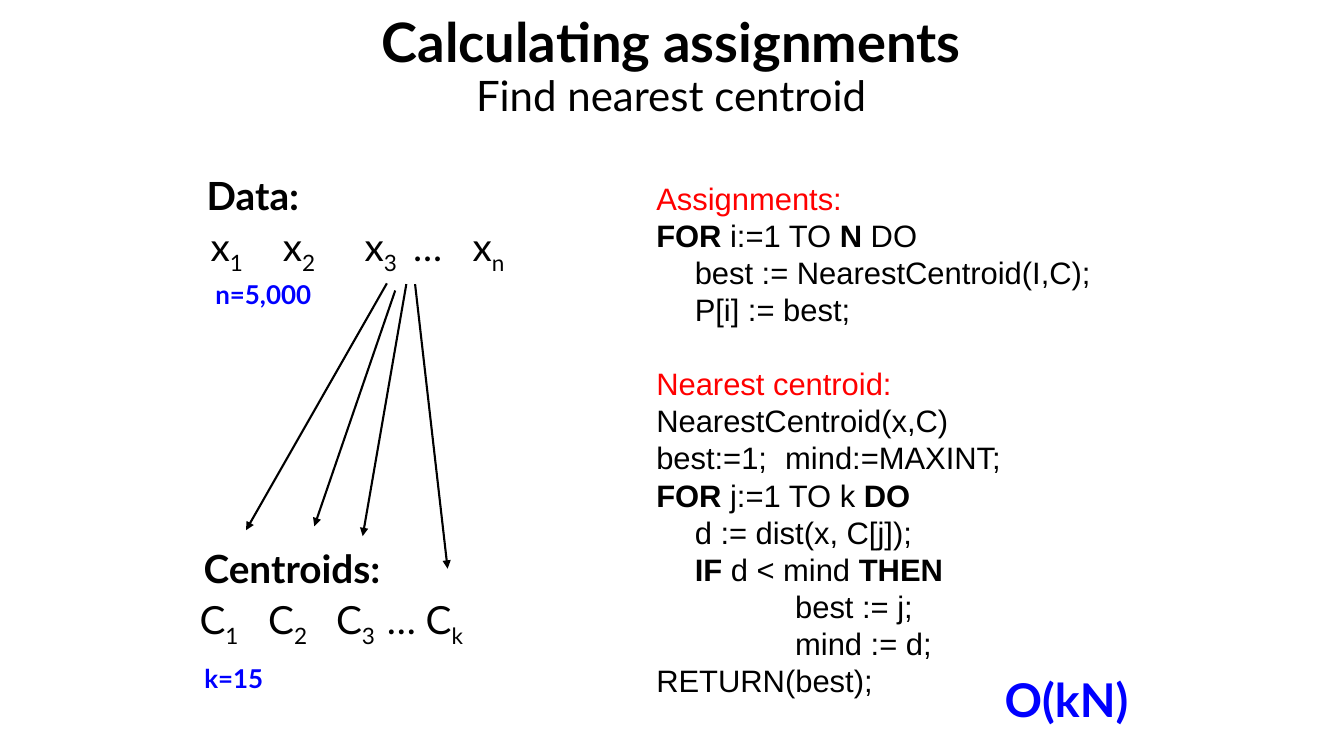
from lxml.etree import SubElement
from pptx import Presentation
from pptx.dml.color import RGBColor
from pptx.enum.shapes import MSO_CONNECTOR as CONN, MSO_SHAPE as SHAPE
from pptx.enum.text import MSO_ANCHOR as ANCHOR, MSO_AUTO_SIZE as AUTO, PP_ALIGN as ALIGN
from pptx.oxml.ns import qn
from pptx.util import Cm, Pt

BLACK, BLUE, RED, WHITE = "000000", "0000FF", "FF0000", "FFFFFF"
HEADING = {"name": "Lato", "size": Pt(27.7), "bold": True}
SYMBOL = {"name": "Lato", "size": Pt(27.7), "bold": False}
COUNT = {"name": "Lato", "size": Pt(18.5), "bold": True}
COST = {"name": "Lato", "size": Pt(33.2), "bold": True}
CODE = {"name": "Arial", "size": Pt(22.1)}
CODE_LINE = Pt(26.5)
CODE_INDENTS = (0, 0.97, 3.5)

ASSIGNMENTS = [
    (0, "*FOR* i:=1 TO *N* DO"),
    (1, "best := NearestCentroid(I,C);"),
    (1, "P[i] := best;"),
]
NEAREST = [
    (0, "NearestCentroid(x,C)"),
    (0, "best:=1;\tmind:=MAXINT;"),
    (0, "*FOR* j:=1 TO k *DO*"),
    (1, "d := dist(x, C[j]);"),
    (1, "*IF* d < mind *THEN*"),
    (2, "best := j;"),
    (2, "mind := d;"),
    (0, "RETURN(best);"),
]
ARROWS = [
    (3.55, 0, 0, 6.22),
    (3.76, 0.18, 1.72, 6.12),
    (4.04, 0.02, 2.94, 6.37),
    (4.26, 0.02, 5.08, 7.19),
]


def rgb(value):
    return RGBColor.from_string(value)


def add_run(p, text, fmt, color=BLACK):
    r = p.add_run()
    r.text = text
    for key, value in fmt.items():
        setattr(r.font, key, value)
    r.font.color.rgb = rgb(color)
    return r


def set_tabs(p, stops):
    tabs = SubElement(p._p.get_or_add_pPr(), qn("a:tabLst"))
    for stop in stops:
        SubElement(tabs, qn("a:tab"), pos=str(Cm(stop)), algn="l")


def set_frame(tf, anchor=ANCHOR.TOP):
    frame = {"margin_left": 0, "margin_top": 0, "margin_right": 0, "margin_bottom": 0,
             "word_wrap": True, "auto_size": AUTO.NONE, "vertical_anchor": anchor}
    for key, value in frame.items():
        setattr(tf, key, value)


def add_label(s, left, top, width, height, anchor=ANCHOR.TOP):
    tf = s.shapes.add_textbox(Cm(left), Cm(top), Cm(width), Cm(height)).text_frame
    set_frame(tf, anchor)
    return tf.paragraphs[0]


def add_title(s, left, top, width, height):
    sp = s.shapes.title
    sp.left, sp.top, sp.width, sp.height = Cm(left), Cm(top), Cm(width), Cm(height)
    tf = sp.text_frame
    set_frame(tf, ANCHOR.MIDDLE)
    lines = [("Calculating assignments", 38.8, True), ("Find nearest centroid", 30, False)]
    for i, (text, size, bold) in enumerate(lines):
        p = tf.add_paragraph() if i else tf.paragraphs[0]
        p.alignment, p.line_spacing = ALIGN.CENTER, 0.93
        add_run(p, text, {"name": "Lato", "size": Pt(size), "bold": bold})


def add_point_set(s, left, top, heading, letter, last, stops, shift, count, count_top):
    add_run(add_label(s, left, top, 5.1, 1.2), heading, HEADING)

    p = add_label(s, left + shift, top + 1.29, 9.12, 1.2)
    set_tabs(p, stops)
    for i, index in enumerate(("1", "2", "3", "…", last)):
        tab = "\t" if i else ""
        if index == "…":
            add_run(p, tab + index, SYMBOL)
        else:
            add_run(p, tab + letter, SYMBOL)
            add_run(p, index, SYMBOL).font._element.set("baseline", "-25000")

    p = add_label(s, left + shift + 0.12, top + count_top, 3.35, 0.89, ANCHOR.MIDDLE)
    p.line_spacing = 0.8
    add_run(p, count, COUNT, BLUE)


def add_arrows(s, left, top):
    for x1, y1, x2, y2 in ARROWS:
        line = s.shapes.add_connector(
            CONN.STRAIGHT, Cm(left + x1), Cm(top + y1), Cm(left + x2), Cm(top + y2))
        line.line.color.rgb = rgb(BLACK)
        line.line.width = Pt(1.5)
        SubElement(line.line._get_or_add_ln(), qn("a:tailEnd"), type="triangle")
        SubElement(line._element.spPr, qn("a:effectLst"))


def add_code(s, left, top, width, height):
    sp = s.shapes.add_shape(SHAPE.RECTANGLE, Cm(left), Cm(top), Cm(width), Cm(height))
    sp.shadow.inherit = False
    sp.fill.solid()
    sp.fill.fore_color.rgb = rgb(WHITE)
    sp.line.fill.background()
    tf = sp.text_frame
    set_frame(tf)

    def add_line(p, level, text, color=BLACK):
        p.alignment, p.line_spacing = ALIGN.LEFT, CODE_LINE
        p._p.get_or_add_pPr().set("marL", str(Cm(CODE_INDENTS[level])))
        if "\t" in text:
            set_tabs(p, [3.25])
        for i, part in enumerate(text.split("*")):
            if part:
                add_run(p, part, CODE | {"bold": i % 2 == 1}, color)

    blocks = [("Assignments:", ASSIGNMENTS), ("Nearest centroid:", NEAREST)]
    for i, (heading, lines) in enumerate(blocks):
        p = tf.add_paragraph() if i else tf.paragraphs[0]
        if i:
            p.space_before = CODE_LINE
        add_line(p, 0, heading, RED)
        for level, text in lines:
            add_line(tf.add_paragraph(), level, text)


def add_cost(s, left, top, width, height):
    add_run(add_label(s, left, top, width, height), "O(kN)", COST, BLUE)


def main():
    prs = Presentation()
    prs.slide_width, prs.slide_height = Cm(33.87), Cm(19.05)
    s = prs.slides.add_slide(prs.slide_layouts[5])
    add_code(s, 16.54, 4.52, 11.3, 13.26)
    add_title(s, 6.02, 0.33, 21.79, 2.74)
    add_point_set(s, 5.21, 4.32, "Data:", "x", "n",
                  (1.82, 3.88, 5.1, 6.6), 0.1, "n=5,000", 2.72)
    add_point_set(s, 5.13, 13.72, "Centroids:", "C", "k",
                  (1.73, 3.44, 4.72, 5.7), -0.1, "k=15", 2.99)
    add_arrows(s, 6.2, 7.14)
    add_cost(s, 25.32, 16.92, 3.61, 1.42)
    prs.save("out.pptx")


if __name__ == "__main__":
    main()
